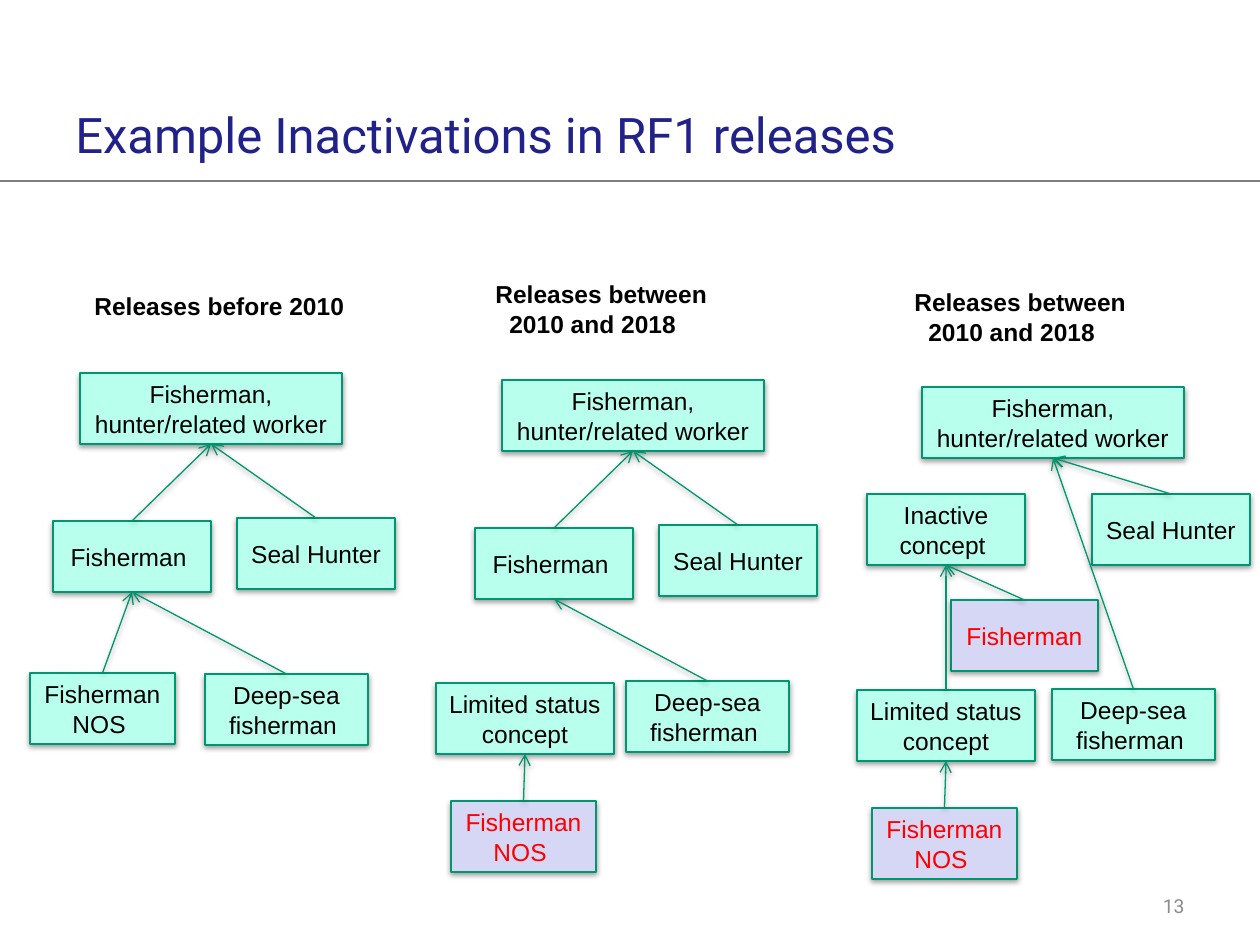
from lxml import etree
from pptx import Presentation, util as u
from pptx.dml.color import RGBColor
from pptx.enum import shapes, text
from pptx.oxml.ns import qn

PX = 914400 / 126
BOX_HEIGHT = 71
GREEN, MINT, LILAC = "00966F", "B8FFED", "D6D6F5"
BLACK, RED, NAVY, GRAY = "000000", "FF0000", "21218A", "8C8C8C"

WORKER = "Fisherman, hunter/related worker "
FISHERMAN = "Fisherman "
SEAL = "Seal Hunter "
NOS = "Fisherman NOS "
DEEP_SEA = "Deep-sea fisherman "
LIMITED = "Limited status concept"
INACTIVE = "Inactive concept "
WIDTHS = {WORKER: 262, FISHERMAN: 158, SEAL: 158, NOS: 145,
          DEEP_SEA: 163, LIMITED: 178, INACTIVE: 158}

BETWEEN = ["Releases between", "2010 and 2018"]
COLUMNS = [
    dict(origin=(0, 0), heading=["Releases before 2010"], heading_at=(82, 285, 277, 43),
         boxes={WORKER: (80, 373), FISHERMAN: (53, 521), SEAL: (237, 518),
                NOS: (30, 673), DEEP_SEA: (205, 674)},
         changed=(),
         links=[(FISHERMAN, WORKER), (SEAL, WORKER), (NOS, FISHERMAN), (DEEP_SEA, FISHERMAN)]),
    dict(origin=(422, 7), heading=BETWEEN, heading_at=(61, 266, 238, 72),
         boxes={WORKER: (80, 373), FISHERMAN: (53, 521), SEAL: (237, 518),
                NOS: (29, 794), DEEP_SEA: (204, 674), LIMITED: (14, 676)},
         changed=(NOS,),
         links=[(FISHERMAN, WORKER), (SEAL, WORKER), (DEEP_SEA, FISHERMAN), (NOS, LIMITED)]),
    dict(origin=(842, 14), heading=BETWEEN, heading_at=(60, 267, 238, 72),
         boxes={WORKER: (80, 373), SEAL: (250, 480), INACTIVE: (25, 480),
                FISHERMAN: (109, 586, 147), NOS: (30, 794),
                DEEP_SEA: (210, 675), LIMITED: (15, 676)},
         changed=(NOS, FISHERMAN),
         links=[(SEAL, WORKER), (DEEP_SEA, WORKER), (FISHERMAN, INACTIVE),
                (LIMITED, INACTIVE), (NOS, LIMITED)]),
]


def px(n):
    return u.Emu(round(n * PX))


def rgb(color):
    return RGBColor.from_string(color)


def write(s, lines, size=14, font="Arial", color=BLACK, bold=False,
          align=text.PP_ALIGN.LEFT, anchor=text.MSO_ANCHOR.MIDDLE, wrap=True, indent=0):
    tf = s.text_frame
    tf.word_wrap = wrap
    tf.vertical_anchor = anchor
    for i, line in enumerate(lines):
        p = tf.add_paragraph() if i else tf.paragraphs[0]
        p.alignment = align
        if i and indent:
            p._p.get_or_add_pPr().set("marL", str(px(indent)))
        r = p.add_run()
        r.text = line
        r.font.size = u.Pt(size)
        r.font.name = font
        r.font.bold = bold
        r.font.color.rgb = rgb(color)
    return tf


def add_text(s_tree, at, lines, **fmt):
    s = s_tree.add_textbox(*map(px, at))
    return write(s, lines, **fmt)


def add_shadow(s):
    spPr = s._element.spPr
    for old in spPr.findall(qn("a:effectLst")):
        spPr.remove(old)
    effects = etree.SubElement(spPr, qn("a:effectLst"))
    shadow = etree.SubElement(effects, qn("a:outerShdw"), blurRad="40000",
                              dist="20000", dir="5400000", rotWithShape="0")
    color = etree.SubElement(shadow, qn("a:srgbClr"), val=BLACK)
    etree.SubElement(color, qn("a:alpha"), val="38000")


def add_box(s_tree, x, y, width, label, fill, color):
    s = s_tree.add_shape(shapes.MSO_SHAPE.RECTANGLE, px(x), px(y), px(width), px(BOX_HEIGHT))
    s.fill.solid()
    s.fill.fore_color.rgb = rgb(fill)
    s.line.color.rgb = rgb(GREEN)
    s.line.width = u.Pt(0.75)
    add_shadow(s)
    write(s, [label], color=color, align=text.PP_ALIGN.CENTER)
    return s


def add_line(s_tree, color, ends=(0, 0, 0, 0)):
    s = s_tree.add_connector(shapes.MSO_CONNECTOR.STRAIGHT, *map(px, ends))
    s.line.color.rgb = rgb(color)
    s.line.width = u.Pt(0.75)
    return s


def add_arrow(s_tree, child, parent):
    s = add_line(s_tree, GREEN)
    s.begin_connect(child, 0)
    s.end_connect(parent, 2)
    etree.SubElement(s.line._get_or_add_ln(), qn("a:tailEnd"), type="arrow")
    add_shadow(s)


def add_column(s_tree, origin, heading, heading_at, boxes, changed, links):
    dx, dy = origin
    x, y, width, height = heading_at
    tf = add_text(s_tree, (x + dx, y + dy, width, height), heading, bold=True,
                  anchor=text.MSO_ANCHOR.TOP, wrap=False, indent=14)
    tf.auto_size = text.MSO_AUTO_SIZE.SHAPE_TO_FIT_TEXT
    nodes = {}
    for label, (x, y, *width) in boxes.items():
        fill, color = (LILAC, RED) if label in changed else (MINT, BLACK)
        nodes[label] = add_box(s_tree, x + dx, y + dy, width[0] if width else WIDTHS[label],
                               label, fill, color)
    for child, parent in links:
        add_arrow(s_tree, nodes[child], nodes[parent])


def main():
    prs = Presentation()
    prs.slide_width, prs.slide_height = px(1260), px(945)
    s_tree = prs.slides.add_slide(prs.slide_layouts[6]).shapes
    rule = add_line(s_tree, "7F7F7F", (0, 181, 1260, 181))
    etree.SubElement(rule._element.spPr, qn("a:effectLst"))
    add_text(s_tree, (903, 886, 294, 40), ["13"], size=11, font="Roboto", color=GRAY,
             align=text.PP_ALIGN.RIGHT)
    add_text(s_tree, (63, 98, 908, 71), ["Example Inactivations in RF1 releases"],
             size=28, font="Roboto", color=NAVY)
    for column in COLUMNS:
        add_column(s_tree, **column)
    prs.save("out.pptx")


if __name__ == "__main__":
    main()
